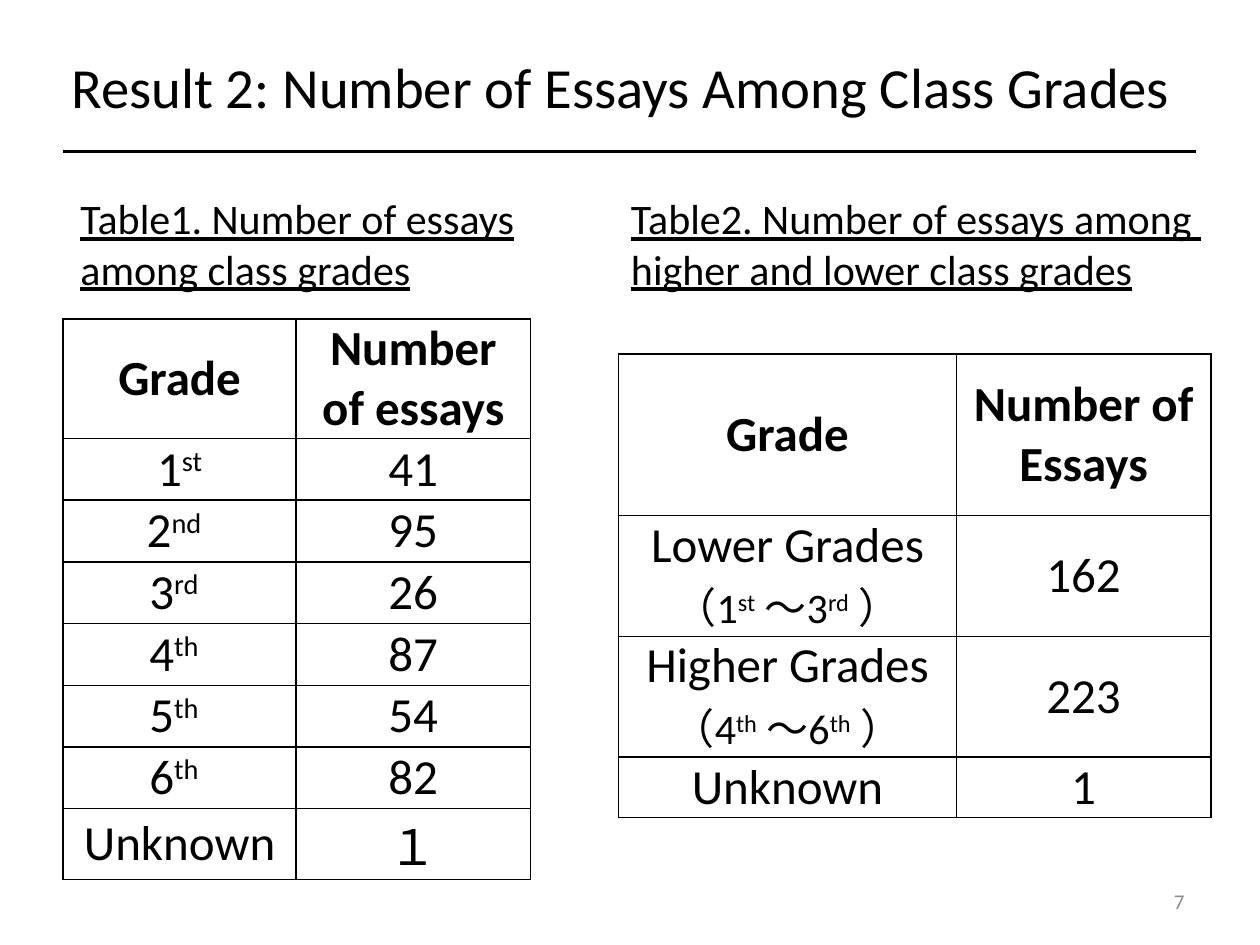
from lxml.etree import SubElement
from pptx import Presentation
from pptx.dml.color import RGBColor
from pptx.enum.shapes import MSO_CONNECTOR
from pptx.enum.text import MSO_ANCHOR, MSO_AUTO_SIZE, PP_ALIGN
from pptx.oxml.ns import qn
from pptx.util import Inches, Pt

# Content: ^ marks the start and end of a superscript
TITLE = "Result 2: Number of Essays Among Class Grades"
PAGE = "7"
CAPTIONS = [
    ("Table2. Number of essays among \vhigher and lower class grades", (4.91, 1.48, 4.74, 0.91)),
    ("Table1. Number of essays among class grades", (0.54, 1.48, 3.95, 0.91)),
]
# Each cell is a list of (text, size name) pieces
GRADES = [("1^st^", "41"), ("2^nd^ ", "95"), ("3^rd^ ", "26"), ("4^th^ ", "87"),
          ("5^th^ ", "54"), ("6^th^ ", "82"), ("Unknown", "１")]
GROUPS = [("Lower Grades", "（1^st^ ～3^rd^ ）", "162"),
          ("Higher Grades", "（4^th^ ～6^th^ ）", "223")]
TABLES = [
    dict(at=(0.5, 2.53), cols=[1.85, 1.86], rows=[0.95] + [0.49] * 6 + [0.56],
         cells=[[[("Grade", "cell")], [("Number of essays", "cell")]]]
         + [[[(g, "cell")], [(n, "cell")]] for g, n in GRADES]),
    dict(at=(4.91, 2.81), cols=[2.68, 2.02], rows=[1.28, 0.96, 0.96, 0.48],
         cells=[[[("Grade", "cell")], [("Number of Essays", "cell")]]]
         + [[[(g, "cell"), (span, "range")], [(n, "cell")]] for g, span, n in GROUPS]
         + [[[("Unknown", "cell")], [("1", "cell")]]]),
]

THEME = dict(
    font="Calibri", ink="000000", muted="8C8C8C",
    size=dict(title=32.4, caption=24, cell=28, range=24, page=12),
)


def style(font, size, color="ink"):
    font.name = THEME["font"]
    font.size = Pt(THEME["size"][size])
    font.color.rgb = RGBColor.from_string(THEME[color])


def add_text(slide, text, box, size, color="ink", align=PP_ALIGN.LEFT, anchor=MSO_ANCHOR.TOP):
    tf = slide.shapes.add_textbox(*map(Inches, box)).text_frame
    tf.word_wrap = True
    tf.vertical_anchor = anchor
    p = tf.paragraphs[0]
    p.text = text
    p.alignment = align
    style(p.font, size, color)
    return tf


def add_borders(cell):
    tcPr = cell._tc.get_or_add_tcPr()
    for i, side in enumerate(("lnL", "lnR", "lnT", "lnB")):
        ln = SubElement(tcPr, qn(f"a:{side}"), w=str(Pt(1)))
        tcPr.insert(i, ln)  # borders come before the fill
        fill = SubElement(ln, qn("a:solidFill"))
        SubElement(fill, qn("a:srgbClr"), val=THEME["ink"])


def fill_cell(cell, pieces, bold):
    cell.fill.background()
    cell.vertical_anchor = MSO_ANCHOR.MIDDLE
    cell.margin_left = cell.margin_right = Inches(0.07)
    cell.margin_top = cell.margin_bottom = 0
    p = cell.text_frame.paragraphs[0]
    p.alignment = PP_ALIGN.CENTER
    for text, size in pieces:
        for i, part in enumerate(text.split("^")):
            if part:
                r = p.add_run()
                r.text = part
                r.font.bold = bold
                style(r.font, size)
                if i % 2:
                    r.font._element.set("baseline", "30000")
    add_borders(cell)


def add_grid(slide, at, cols, rows, cells):
    box = (*at, sum(cols), sum(rows))
    table = slide.shapes.add_table(len(rows), len(cols), *map(Inches, box)).table
    table.first_row = table.horz_banding = False
    for col, width in zip(table.columns, cols):
        col.width = Inches(width)
    for i, (row, height) in enumerate(zip(table.rows, rows)):
        row.height = Inches(height)
        for cell, pieces in zip(row.cells, cells[i]):
            fill_cell(cell, pieces, bold=i == 0)


def main():
    prs = Presentation()
    prs.slide_width, prs.slide_height = Inches(10), Inches(7.5)
    slide = prs.slides.add_slide(prs.slide_layouts[6])

    # Title and rule
    add_text(slide, TITLE, (0.35, 0.3, 9.15, 0.76), "title",
             align=PP_ALIGN.CENTER, anchor=MSO_ANCHOR.MIDDLE)
    rule = slide.shapes.add_connector(
        MSO_CONNECTOR.STRAIGHT, *map(Inches, (0.5, 1.2, 9.49, 1.2)))
    rule.line.color.rgb = RGBColor.from_string(THEME["ink"])
    rule.line.width = Pt(1.5)
    SubElement(rule._element.spPr, qn("a:effectLst"))

    # Tables and their captions
    for table in TABLES:
        add_grid(slide, **table)
    for text, box in CAPTIONS:
        tf = add_text(slide, text, box, "caption")
        tf.auto_size = MSO_AUTO_SIZE.SHAPE_TO_FIT_TEXT
        tf.paragraphs[0].font.underline = True

    # Page number
    add_text(slide, PAGE, (7.17, 6.95, 2.33, 0.4), "page", "muted",
             PP_ALIGN.RIGHT, MSO_ANCHOR.MIDDLE)
    prs.save("out.pptx")


if __name__ == "__main__":
    main()
